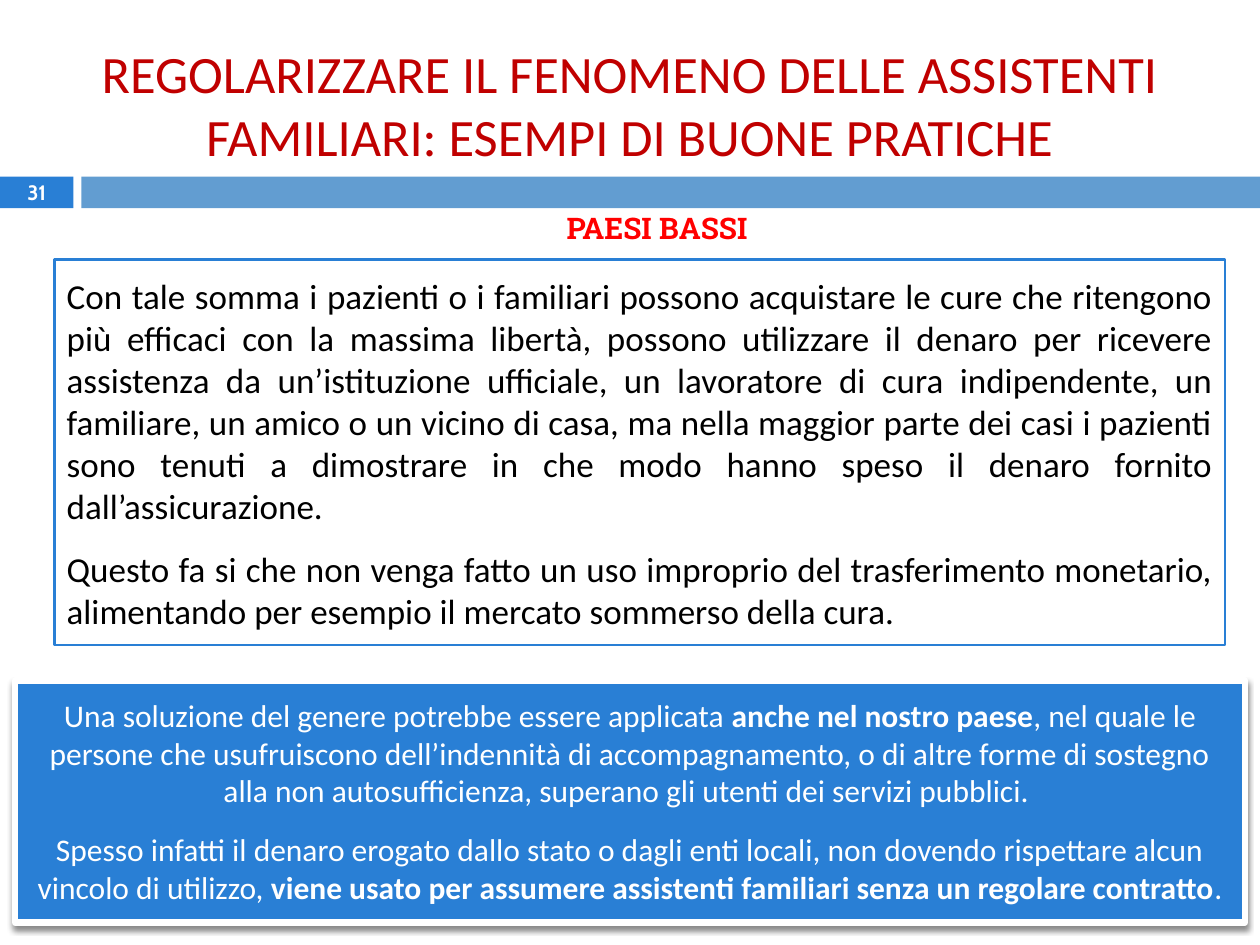
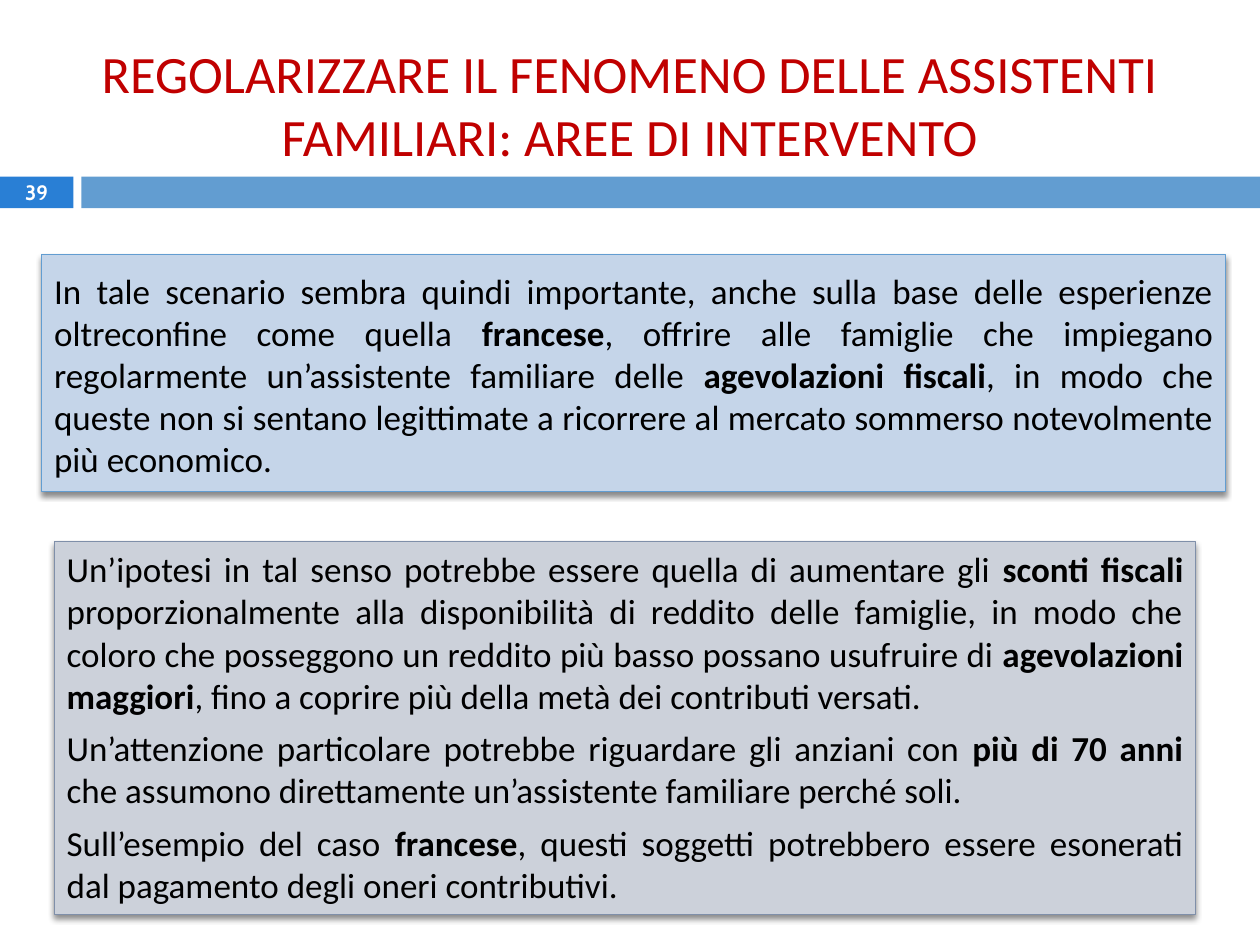
"""Builds two slides on regularising the work of family care assistants."""
from lxml import etree
from pptx import Presentation
from pptx import util as u
from pptx.dml.color import RGBColor
from pptx.enum import shapes, text
from pptx.oxml.ns import qn

COLORS = {
    "title": "C00000", "heading": "FF0000", "blue": "297FD5", "band": "629DD1",
    "pale": "C5D5E9", "grey": "CCD1DA", "slate": "7F8FA9",
    "white": "FFFFFF", "black": "000000",
}
TOPIC = "REGOLARIZZARE IL FENOMENO DELLE ASSISTENTI FAMILIARI: "
CENTER, JUSTIFY = text.PP_ALIGN.CENTER, text.PP_ALIGN.JUSTIFY
TOP, MIDDLE = text.MSO_ANCHOR.TOP, text.MSO_ANCHOR.MIDDLE


def rgb(name):
    return RGBColor.from_string(COLORS[name])


def apply(obj, values):
    for name, value in values.items():
        setattr(obj, name, value)


class Deck:
    def __init__(self):
        self.prs = Presentation()
        apply(self.prs, {"slide_width": u.Pt(720), "slide_height": u.Pt(540)})
        self.s = None

    def slide(self, subject, number):
        self.s = self.prs.slides.add_slide(self.prs.slide_layouts[5])
        self.rect((0, 101, 42, 18), "blue")
        self.rect((46.5, 101, 673.5, 18), "band")
        self.label((0, 100, 42, 19.5), number, 11.9, "Cabin", "white", MIDDLE)
        self.title(TOPIC + subject)

    def title(self, words):
        sp = self.s.shapes.title
        box = zip(("left", "top", "width", "height"), (8.5, 20, 703, 80))
        apply(sp, {name: u.Pt(value) for name, value in box})
        self.fill_text(sp, [words], 30, "title")

    def label(self, box, words, size, font, color, anchor=TOP):
        sp = self.s.shapes.add_textbox(*map(u.Pt, box))
        self.fill_text(sp, [f"**{words}**"], size, color, font=font, anchor=anchor)

    def rect(self, box, fill, line=None, width=0.79, shadow=False):
        sp = self.s.shapes.add_shape(shapes.MSO_SHAPE.RECTANGLE, *map(u.Pt, box))
        sp.fill.solid()
        sp.fill.fore_color.rgb = rgb(fill)
        if line:
            sp.line.color.rgb = rgb(line)
            sp.line.width = u.Pt(width)
        else:
            sp.line.fill.background()
        sp.shadow.inherit = False
        if shadow:
            self.shadow(sp)
        return sp

    def shadow(self, sp):
        effects = sp._element.spPr.find(qn("a:effectLst"))
        outer = etree.SubElement(effects, qn("a:outerShdw"), {
            "blurRad": str(u.Pt(3)), "dist": str(u.Pt(2.4)),
            "dir": "5400000", "rotWithShape": "0"})
        color = etree.SubElement(outer, qn("a:srgbClr"), val=COLORS["black"])
        etree.SubElement(color, qn("a:alpha"), val="45000")

    def panel(self, box, paragraphs, fill, line, width=0.79, shadow=True,
              size=20, color="black", align=JUSTIFY, after=12, insets=(8.64, 5.76)):
        sp = self.rect(box, fill, line, width, shadow)
        self.fill_text(sp, paragraphs, size, color, align, after, insets)

    def fill_text(self, sp, paragraphs, size, color, align=CENTER, after=0,
                  insets=(3.6, 3.6), font="Calibri", anchor=TOP):
        tf = sp.text_frame
        apply(tf, {
            "word_wrap": True, "auto_size": text.MSO_AUTO_SIZE.NONE,
            "vertical_anchor": anchor,
            "margin_left": u.Pt(7.2), "margin_right": u.Pt(7.2),
            "margin_top": u.Pt(insets[0]), "margin_bottom": u.Pt(insets[1])})
        for i, words in enumerate(paragraphs):
            p = tf.add_paragraph() if i else tf.paragraphs[0]
            apply(p, {"alignment": align, "space_after": u.Pt(after)})
            for j, part in enumerate(words.split("**")):
                if part:
                    r = p.add_run()
                    r.text = part
                    apply(r.font, {"size": u.Pt(size), "name": font, "bold": j % 2 == 1})
                    r.font.color.rgb = rgb(color)


def good_practice(deck):
    deck.slide("ESEMPI DI BUONE PRATICHE", "31")
    deck.label((300, 116.5, 151, 28), "PAESI BASSI", 17, "Roboto Slab", "heading")
    deck.panel((31, 148.3, 669, 220.3), [
        "Con tale somma i pazienti o i familiari possono acquistare le cure che "
        "ritengono più efficaci con la massima libertà, possono utilizzare il denaro "
        "per ricevere assistenza da un’istituzione ufficiale, un lavoratore di cura "
        "indipendente, un familiare, un amico o un vicino di casa, ma nella maggior "
        "parte dei casi i pazienti sono tenuti a dimostrare in che modo hanno speso "
        "il denaro fornito dall’assicurazione.",
        "Questo fa si che non venga fatto un uso improprio del trasferimento "
        "monetario, alimentando per esempio il mercato sommerso della cura.",
    ], "white", "blue", 1.5, shadow=False)
    deck.panel((8.6, 389, 702.8, 138.2), [
        "Una soluzione del genere potrebbe essere applicata **anche nel nostro "
        "paese**, nel quale le persone che usufruiscono dell’indennità di "
        "accompagnamento, o di altre forme di sostegno alla non autosufficienza, "
        "superano gli utenti dei servizi pubblici. ",
        "Spesso infatti il denaro erogato dallo stato o dagli enti locali, non "
        "dovendo rispettare alcun vincolo di utilizzo, **viene usato per assumere "
        "assistenti familiari senza un regolare contratto**.",
    ], "blue", "white", 3.75, size=18, color="white", align=CENTER,
        insets=(8.64, 8.64))


def intervention_areas(deck):
    deck.slide("AREE DI INTERVENTO", "39")
    deck.panel((23.8, 145.4, 676.6, 135.4), [
        "In tale scenario sembra quindi importante, anche sulla base delle esperienze "
        "oltreconfine come quella **francese**, offrire alle famiglie che impiegano "
        "regolarmente un’assistente familiare delle **agevolazioni fiscali**, in modo "
        "che queste non si sentano legittimate a ricorrere al mercato sommerso "
        "notevolmente più economico.",
    ], "pale", "band")
    deck.panel((31, 309.6, 652.3, 213.1), [
        "Un’ipotesi in tal senso potrebbe essere quella di aumentare gli **sconti "
        "fiscali **proporzionalmente alla disponibilità di reddito delle famiglie, in "
        "modo che coloro che posseggono un reddito più basso possano usufruire di "
        "**agevolazioni maggiori**, fino a coprire più della metà dei contributi "
        "versati.",
        "Un’attenzione particolare potrebbe riguardare gli anziani con **più di 70 "
        "anni **che assumono direttamente un’assistente familiare perché soli.",
        "Sull’esempio del caso **francese**, questi soggetti potrebbero essere "
        "esonerati dal pagamento degli oneri contributivi.",
    ], "grey", "slate", after=6, insets=(3.6, 3.6))


def main():
    deck = Deck()
    good_practice(deck)
    intervention_areas(deck)
    deck.prs.save("out.pptx")


if __name__ == "__main__":
    main()
